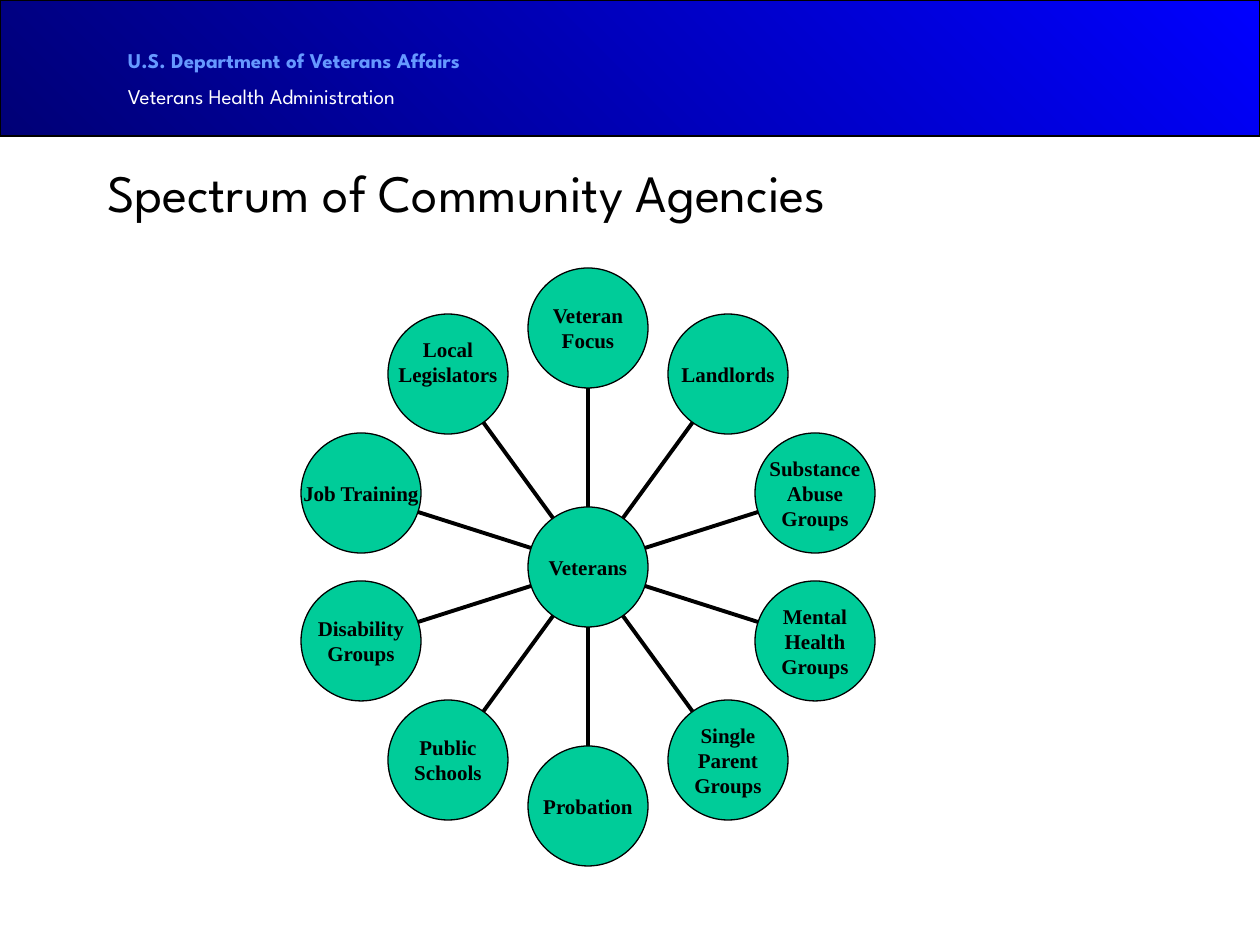
from math import cos, radians, sin

from lxml.etree import SubElement
from pptx import Presentation
from pptx.dml.color import RGBColor
from pptx.enum.shapes import MSO_CONNECTOR, MSO_SHAPE
from pptx.enum.text import MSO_ANCHOR, PP_ALIGN
from pptx.oxml.ns import qn
from pptx.util import Pt

SCALE = 914400 // 126
SANS, SERIF = "League Spartan", "Times New Roman"
BLACK, GREEN = "000000", "00CC99"
MID_X, MID_Y, REACH, SIZE = 588, 567, 239, 120
AGENCIES = [
    "Veteran\nFocus",
    "Landlords",
    "Substance\nAbuse\nGroups",
    "Mental\nHealth\nGroups",
    "Single\nParent\nGroups",
    "Probation",
    "Public\nSchools",
    "Disability\nGroups",
    "Job Training",
    "Local\nLegislators",
]


def px(*vals):
    return [round(val) * SCALE for val in vals]


def hue(code):
    return RGBColor.from_string(code)


def write(frame, text, font=SANS, size=12, color=BLACK, bold=False,
          align=PP_ALIGN.LEFT, anchor=MSO_ANCHOR.TOP, inset=(13, 6, 13, 6),
          wrap=True, gap=0):
    frame.word_wrap = wrap
    frame.vertical_anchor = anchor
    (frame.margin_left, frame.margin_top,
     frame.margin_right, frame.margin_bottom) = px(*inset)
    frame.text = text
    for rank, para in enumerate(frame.paragraphs):
        para.alignment = align
        para.space_before = Pt(gap if rank else 0)
        for run in para.runs:
            run.font.name, run.font.size, run.font.bold = font, Pt(size), bold
            run.font.color.rgb = hue(color)


class Deck:
    """Holds the line style and the current slide."""

    def __init__(self):
        self.show = Presentation()
        self.show.slide_width, self.show.slide_height = px(1260, 945)
        self.slide = self.show.slides.add_slide(self.show.slide_layouts[5])

    def shape(self, kind, *box):
        item = self.slide.shapes.add_shape(kind, *px(*box))
        item.shadow.inherit = False
        item.line.color.rgb = hue(BLACK)
        item.line.width = Pt(0.75)
        return item

    def banner(self, start, end, *box):
        fill = self.shape(MSO_SHAPE.RECTANGLE, *box).fill
        fill.gradient()
        fill.gradient_angle = 45
        for stop, code in zip(fill.gradient_stops, (start, end)):
            stop.color.rgb = hue(code)

    def title(self, text, *box):
        item = self.slide.shapes.title
        item.left, item.top, item.width, item.height = px(*box)
        write(item.text_frame, text, size=30, anchor=MSO_ANCHOR.MIDDLE)

    def label(self, text, *box):
        frame = self.slide.shapes.add_textbox(*px(*box)).text_frame
        write(frame, text, color="FFFFFF", gap=6)
        font = frame.paragraphs[0].runs[0].font
        font.bold, font.color.rgb = True, hue("6699FF")

    def spoke(self, *ends):
        line = self.slide.shapes.add_connector(MSO_CONNECTOR.STRAIGHT, *px(*ends))
        line.line.color.rgb = hue(BLACK)
        line.line.width = Pt(2.25)
        SubElement(line._element.spPr, qn("a:effectLst"))

    def node(self, text, x, y, lift=0):
        item = self.shape(MSO_SHAPE.OVAL, x - SIZE / 2, y - SIZE / 2, SIZE, SIZE)
        item.fill.solid()
        item.fill.fore_color.rgb = hue(GREEN)
        write(item.text_frame, text, font=SERIF, bold=True, wrap=False,
              align=PP_ALIGN.CENTER, anchor=MSO_ANCHOR.MIDDLE,
              inset=(0, 0, 0, lift))


def polar(turn, reach):
    return MID_X + reach * sin(turn), MID_Y - reach * cos(turn)


def main():
    deck = Deck()
    deck.banner("000076", "0000FF", 0, 0, 1260, 136)
    deck.label("U.S. Department of Veterans Affairs\nVeterans Health Administration",
               115, 42, 504, 76)
    deck.title("Spectrum of Community Agencies", 94, 134, 1071, 116)
    for rank, name in enumerate(AGENCIES):
        turn = radians(rank * 360 / len(AGENCIES))
        deck.spoke(*polar(turn, SIZE / 2), *polar(turn, REACH - SIZE / 2))
        lift = 25 if name.startswith("Local") else 0
        deck.node(name, *polar(turn, REACH), lift)
    deck.node("Veterans", MID_X, MID_Y)
    deck.show.save("out.pptx")


if __name__ == "__main__":
    main()
